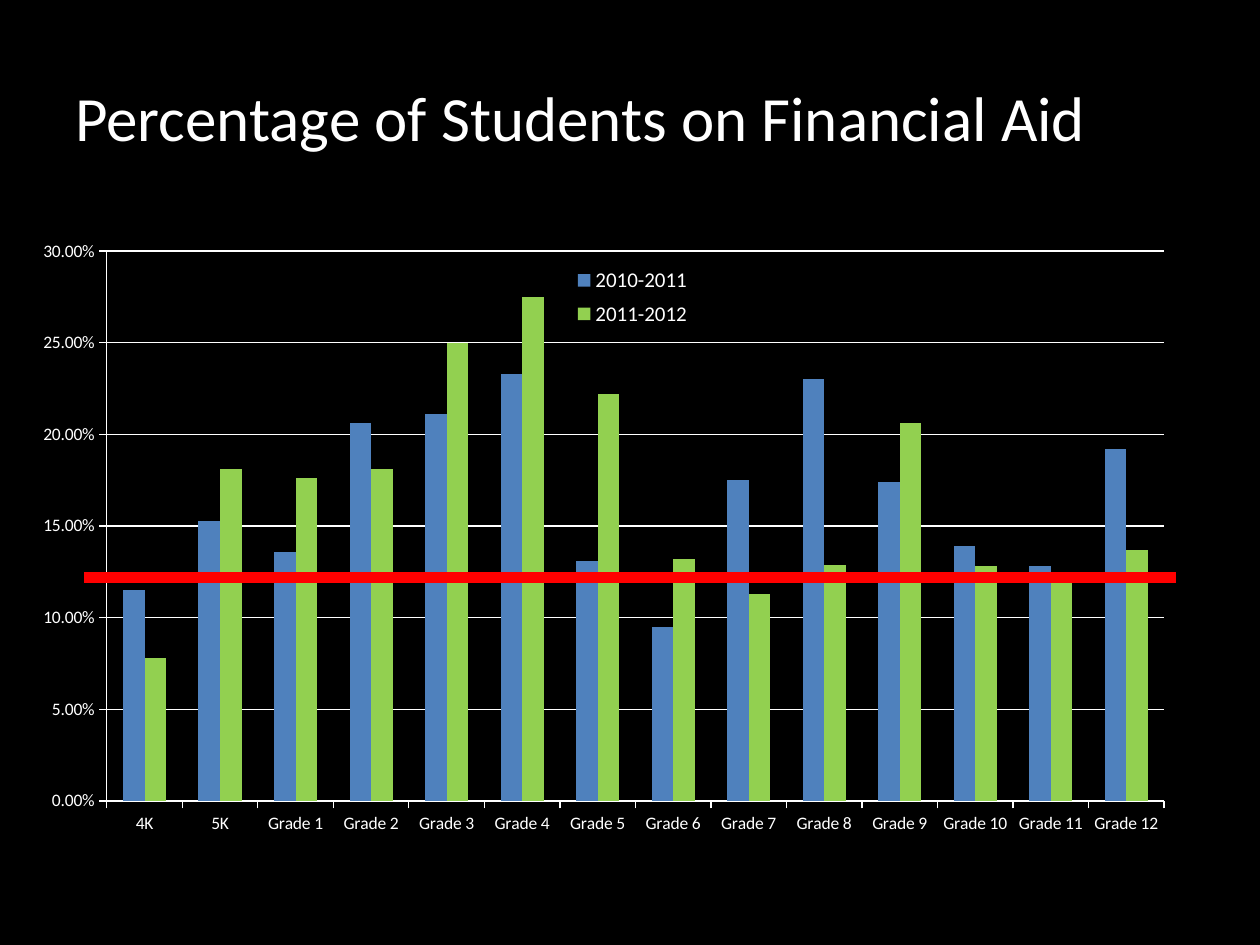
from lxml import etree
from pptx import Presentation
from pptx.chart.data import CategoryChartData
from pptx.dml.color import RGBColor
from pptx.enum.chart import XL_CHART_TYPE, XL_LEGEND_POSITION, XL_TICK_MARK
from pptx.enum.shapes import MSO_CONNECTOR
from pptx.enum.text import MSO_ANCHOR
from pptx.oxml.ns import qn
from pptx.util import Pt

COLUMNS = XL_CHART_TYPE.COLUMN_CLUSTERED
RIGHT = XL_LEGEND_POSITION.RIGHT
OUTSIDE, NO_TICK = XL_TICK_MARK.OUTSIDE, XL_TICK_MARK.NONE
STRAIGHT = MSO_CONNECTOR.STRAIGHT
MIDDLE = MSO_ANCHOR.MIDDLE

FONT, WHITE, BLACK, RED = "Calibri", "FFFFFF", "000000", "FF0000"
TITLE = "Percentage of Students on Financial Aid"
GRADES = ["4K", "5K"] + [f"Grade {n}" for n in range(1, 13)]
SERIES = [
    ("2010-2011", "4F81BD", [0.115, 0.153, 0.136, 0.206, 0.211, 0.233, 0.131,
                             0.095, 0.175, 0.23, 0.174, 0.139, 0.128, 0.192]),
    ("2011-2012", "92D050", [0.078, 0.181, 0.176, 0.181, 0.25, 0.275, 0.222,
                             0.132, 0.113, 0.129, 0.206, 0.128, 0.125, 0.137]),
]
PLOT_BOX = (0.073, 0.032, 0.899, 0.873)
LEGEND_BOX = (0.46, 0.045, 0.12, 0.12)


def color(value):
    return RGBColor.from_string(value)


def set_font(font, size):
    font.name, font.size = FONT, Pt(size)
    font.color.rgb = color(WHITE)


def set_line(line, value, width):
    line.color.rgb = color(value)
    line.width = Pt(width)


def add_text(slide, text, left, top, width, height, size, anchor):
    tf = slide.shapes.add_textbox(Pt(left), Pt(top), Pt(width), Pt(height)).text_frame
    tf.word_wrap = True
    tf.vertical_anchor = anchor
    r = tf.paragraphs[0].add_run()
    r.text = text
    set_font(r.font, size)


def set_layout(parent, box, index, inner=False):
    for old in parent.findall(qn("c:layout")):
        parent.remove(old)
    layout = etree.Element(qn("c:layout"))
    manual = etree.SubElement(layout, qn("c:manualLayout"))
    values = [("layoutTarget", "inner")] if inner else []
    values += [("xMode", "edge"), ("yMode", "edge"), *zip("xywh", box)]
    for tag, value in values:
        etree.SubElement(manual, qn(f"c:{tag}")).set("val", str(value))
    parent.insert(index, layout)


def add_aid_chart(slide, left, top, width, height):
    data = CategoryChartData(number_format="0.00%")
    data.categories = GRADES
    for name, _, values in SERIES:
        data.add_series(name, values)
    chart = slide.shapes.add_chart(COLUMNS, Pt(left), Pt(top), Pt(width), Pt(height), data).chart
    chart.has_title = False
    set_font(chart.font, 10)

    plot = chart.plots[0]
    plot.gap_width, plot.overlap = 150, 0
    plot.vary_by_categories = False
    for series, (_, fill, _) in zip(plot.series, SERIES):
        series.format.fill.solid()
        series.format.fill.fore_color.rgb = color(fill)

    for axis in (chart.category_axis, chart.value_axis):
        axis.major_tick_mark, axis.minor_tick_mark = OUTSIDE, NO_TICK
        set_line(axis.format.line, WHITE, 0.75)
        set_font(axis.tick_labels.font, 10)
    axis = chart.value_axis
    axis.minimum_scale, axis.maximum_scale, axis.major_unit = 0, 0.3, 0.05
    axis.tick_labels.number_format = "0.00%"
    axis.tick_labels.number_format_is_linked = False
    axis.has_major_gridlines = True
    set_line(axis.major_gridlines.format.line, WHITE, 0.75)

    chart.has_legend = True
    legend = chart.legend
    legend.position = RIGHT
    legend.include_in_layout = True
    set_font(legend.font, 12)
    root = chart.element
    set_layout(root.find(".//" + qn("c:plotArea")), PLOT_BOX, 0, inner=True)
    legend_xml = root.find(".//" + qn("c:legend"))
    set_layout(legend_xml, LEGEND_BOX, len(legend_xml.findall(qn("c:legendPos"))))


def add_rule(slide, left, right, y, value, width):
    line = slide.shapes.add_connector(STRAIGHT, Pt(left), Pt(y), Pt(right), Pt(y))
    set_line(line.line, value, width)
    etree.SubElement(line.element.spPr, qn("a:effectLst"))


def main():
    prs = Presentation()
    prs.slide_width, prs.slide_height = Pt(720), Pt(540)
    s = prs.slides.add_slide(prs.slide_layouts[6])
    s.background.fill.solid()
    s.background.fill.fore_color.rgb = color(BLACK)
    add_text(s, TITLE, 36, 21.6, 648, 90, size=36, anchor=MIDDLE)
    add_aid_chart(s, 12, 132, 672, 360)
    add_rule(s, 48, 672, 330, RED, 6)
    prs.save("out.pptx")


if __name__ == "__main__":
    main()
